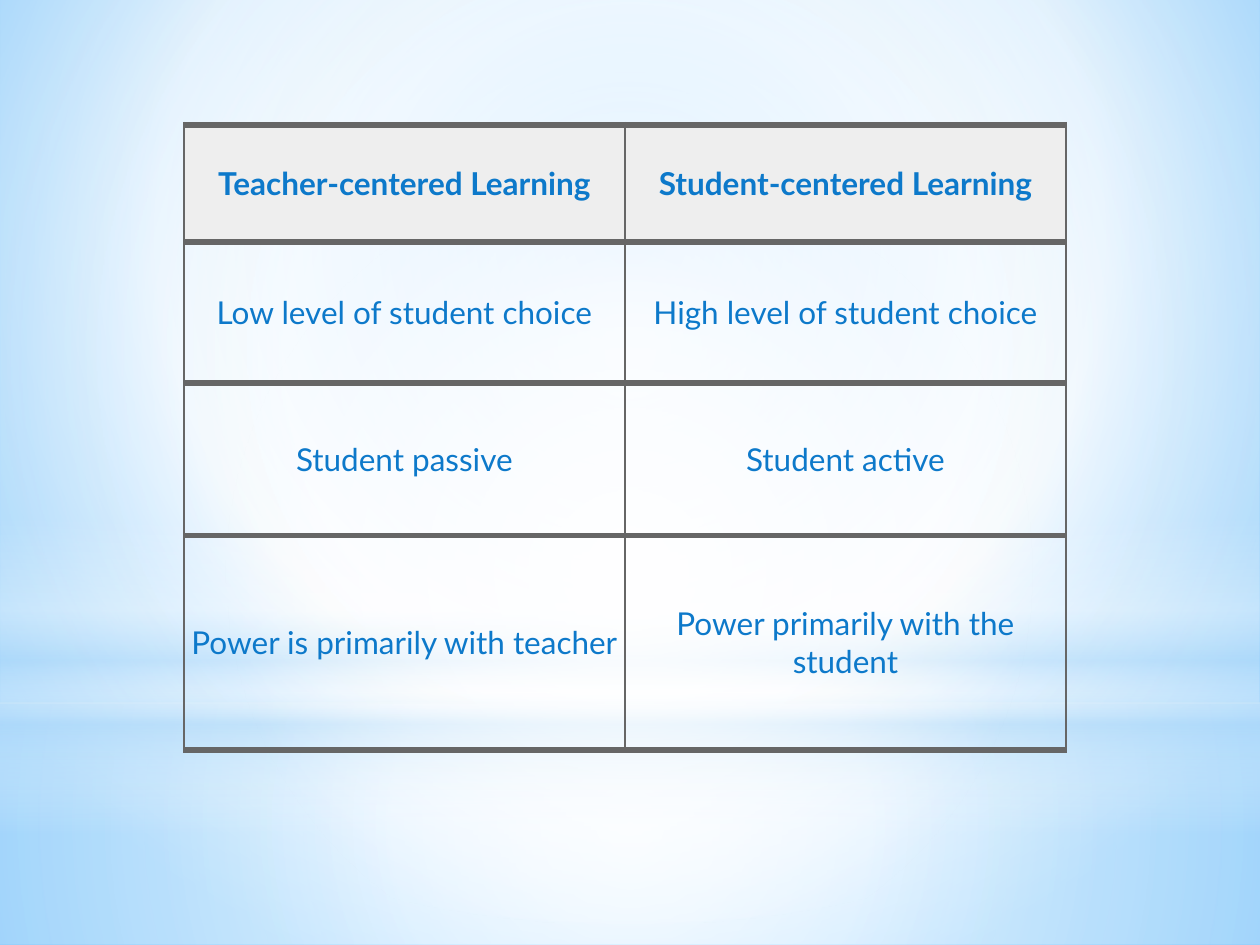
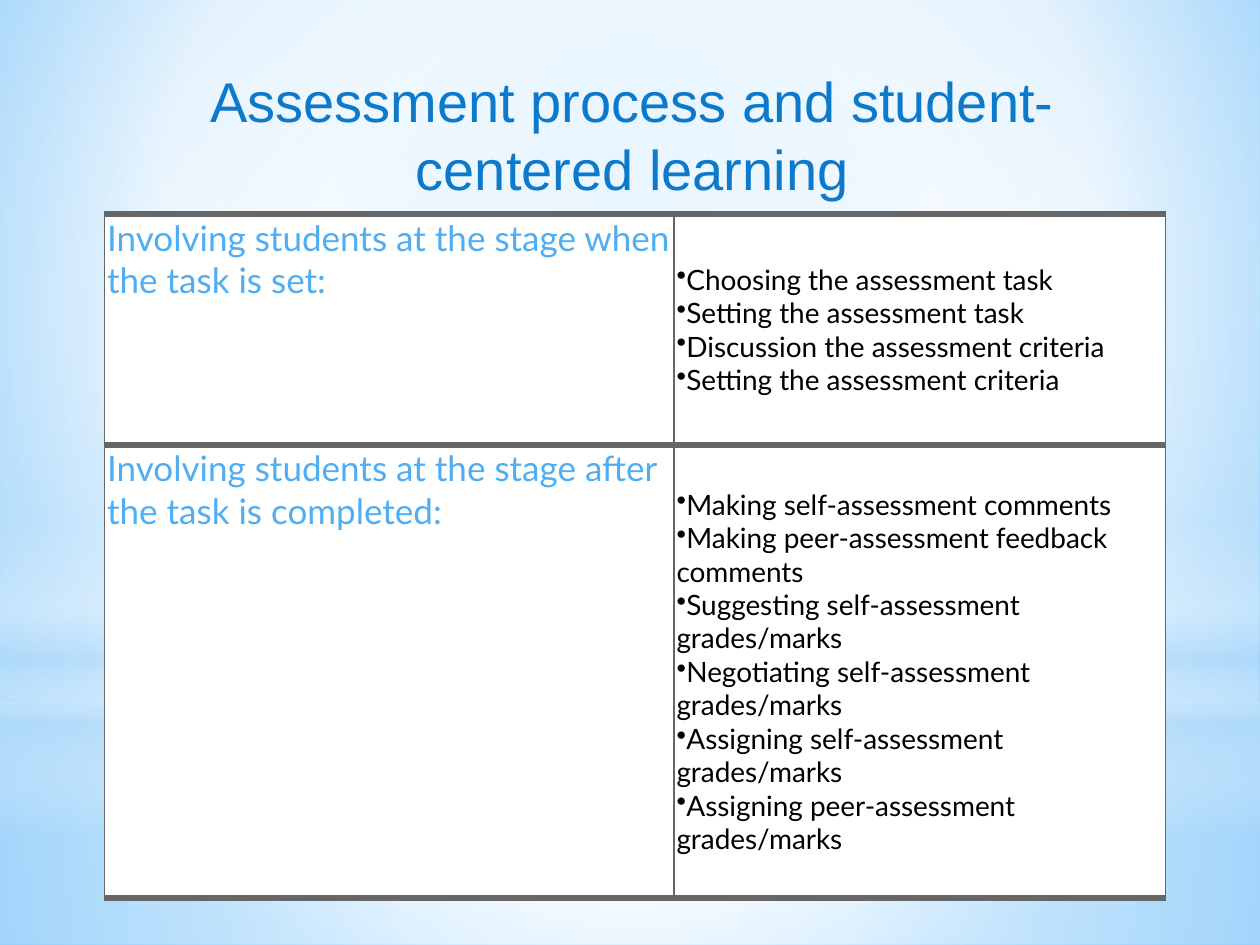
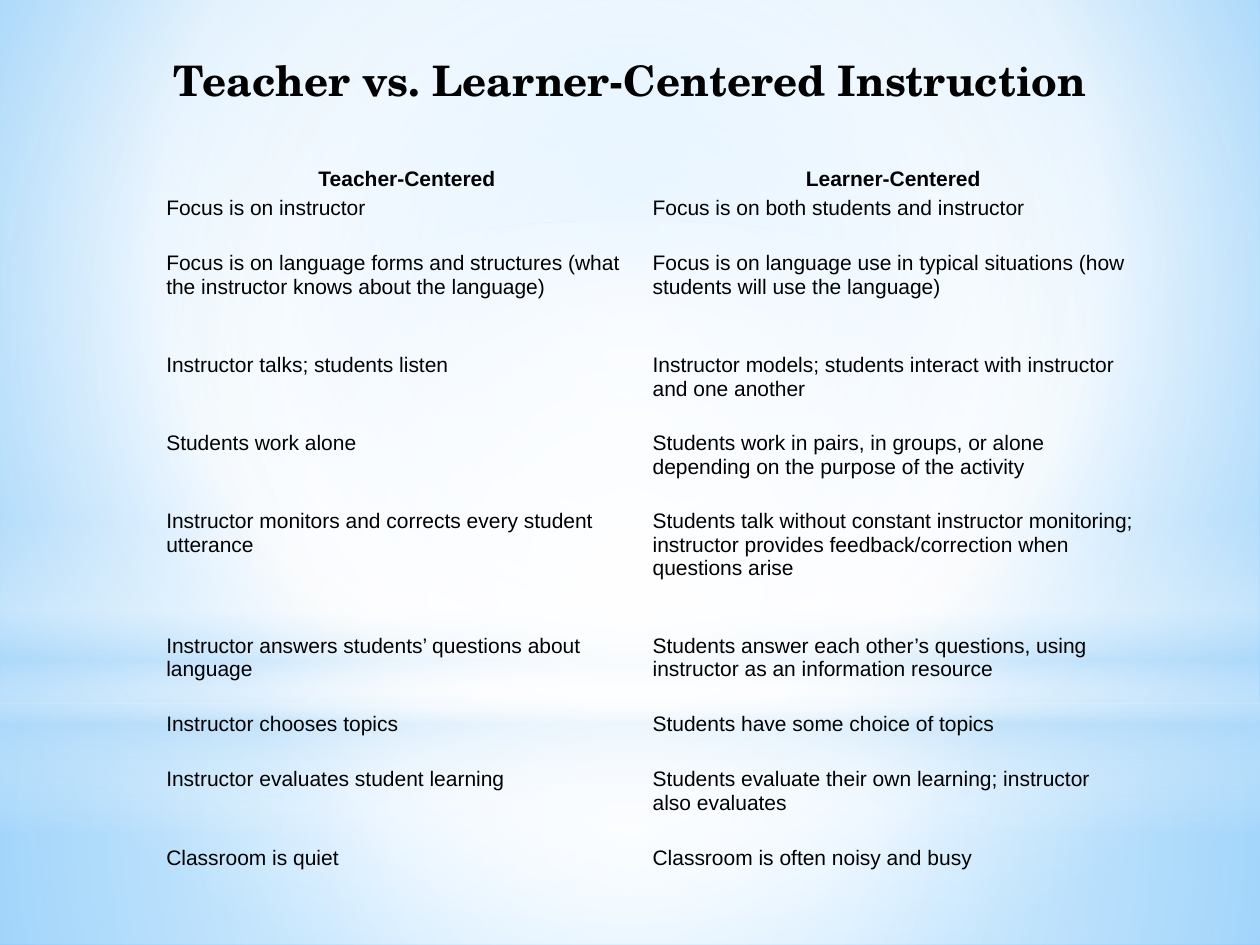
"""Build three slides comparing teacher-centered and student-centered learning."""
from pptx import Presentation
from pptx.dml.color import RGBColor
from pptx.enum.shapes import MSO_SHAPE as Shape
from pptx.enum.text import MSO_ANCHOR as Anchor, MSO_AUTO_SIZE as AutoSize, PP_ALIGN as Align
from pptx.oxml import parse_xml
from pptx.oxml.ns import nsdecls, qn
from pptx.util import Inches, Pt

BLUE, LIGHT_BLUE, PALE_BLUE = "0D79CA", "4FADF3", "B4DCFA"
BLACK, WHITE, HEADER_GRAY, RULE_GRAY = "000000", "FFFFFF", "EEEEEE", "666666"
NO_STYLE = "{2D5ABB26-0587-4C30-8999-92F81FD0307C}"
BORDERS = {"lnL": 0.75, "lnR": 0.75, "lnT": 3.75, "lnB": 3.75}

CENTER = (50, 50, 50, 50)
BACKGROUND = [(0, "9ED5FF", 100), (60, WHITE, 100), (100, "5BB9FF", 100)]
BACKGROUND_FOCUS = (20, 10, 20, 60)
BANDS = [
    (Shape.RECTANGLE, (0, 5.58, 10, 1.92), CENTER,
     [(0, WHITE, 91), (37, WHITE, 76), (100, PALE_BLUE, 79)]),
    (Shape.RECTANGLE, (0, 0, 10, 5.58), CENTER,
     [(0, WHITE, 89), (48, WHITE, 62), (100, PALE_BLUE, 79)]),
    (Shape.RECTANGLE, (0, 4.12, 10, 2.5), None,
     [(0, WHITE, 0), (29, WHITE, 30), (45, PALE_BLUE, 40),
      (55, WHITE, 26), (65, PALE_BLUE, 60), (100, WHITE, 0)]),
    (Shape.OVAL, (0, 1.75, 10, 5.58), CENTER, [(0, WHITE, 100), (56, WHITE, 0)]),
]

LEARNING_ROWS = [
    ("Teacher-centered Learning", "Student-centered Learning"),
    ("Low level of student choice", "High level of student choice"),
    ("Student passive", "Student active"),
    ("Power is primarily with teacher", "Power primarily with the student"),
]
ASSESSMENT_TITLE = "Assessment process and student-centered learning"
ASSESSMENT_ROWS = [
    ("Involving students at the stage when the task is set:",
     "\n".join(["Choosing the assessment task",
                "Setting the assessment task",
                "Discussion the assessment criteria",
                "Setting the assessment criteria"])),
    ("Involving students at the stage after the task is completed:",
     "\n".join(["Making self-assessment comments",
                "Making peer-assessment feedback comments",
                "Suggesting self-assessment grades/marks",
                "Negotiating self-assessment grades/marks",
                "Assigning self-assessment grades/marks",
                "Assigning peer-assessment grades/marks"])),
]
INSTRUCTION_TITLE = "Teacher vs. Learner-Centered Instruction"
INSTRUCTION_ROWS = [
    ("Teacher-Centered", "Learner-Centered"),
    ("Focus is on instructor", "Focus is on both students and instructor"),
    ("Focus is on language forms and structures (what the instructor knows about the language)",
     "Focus is on language use in typical situations (how students will use the language)"),
    ("Instructor talks; students listen",
     "Instructor models; students interact with instructor and one another"),
    ("Students work alone",
     "Students work in pairs, in groups, or alone depending on the purpose of the activity"),
    ("Instructor monitors and corrects every student utterance",
     "Students talk without constant instructor monitoring; "
     "instructor provides feedback/correction when questions arise"),
    ("Instructor answers students’ questions about language",
     "Students answer each other’s questions, using instructor as an information resource"),
    ("Instructor chooses topics", "Students have some choice of topics"),
    ("Instructor evaluates student learning",
     "Students evaluate their own learning; instructor also evaluates"),
    ("Classroom is quiet", "Classroom is often noisy and busy"),
]


def rgb(color):
    """Turn a hex string into a colour."""
    return RGBColor.from_string(color)


def set_gradient(properties, stops, focus):
    """Replace the empty fill by a gradient: circular around a focus, or vertical."""
    stop_xml = "".join(
        f'<a:gs pos="{position * 1000}"><a:srgbClr val="{color}">'
        f'<a:alpha val="{alpha * 1000}"/></a:srgbClr></a:gs>'
        for position, color, alpha in stops)
    direction = '<a:lin ang="5400000" scaled="0"/>'
    if focus:
        sides = " ".join(f'{side}="{part * 1000}"' for side, part in zip("ltrb", focus))
        direction = f'<a:path path="circle"><a:fillToRect {sides}/></a:path>'
    gradient = parse_xml(f'<a:gradFill {nsdecls("a")} rotWithShape="1">'
                         f'<a:gsLst>{stop_xml}</a:gsLst>{direction}</a:gradFill>')
    properties.replace(properties.find(qn("a:noFill")), gradient)


def decorate_master(master, slide):
    """Give the master its background and bands, drawn on a slide and moved over."""
    master.background.fill.background()
    set_gradient(master.element.find(".//" + qn("p:bgPr")), BACKGROUND, BACKGROUND_FOCUS)
    for index, (kind, box, focus, stops) in enumerate(BANDS):
        band = slide.shapes.add_shape(kind, *map(Inches, box))
        band.shadow.inherit = False
        band.fill.background()
        band.line.fill.background()
        set_gradient(band.element.find(qn("p:spPr")), stops, focus)
        band.element.find(".//" + qn("p:cNvPr")).set("id", str(100 + index))
        master.shapes.element.insert(2 + index, band.element)


def format_text(text_frame, font_name, size, color, bold=False, align=Align.LEFT):
    """Format every run of a text frame."""
    for paragraph in text_frame.paragraphs:
        paragraph.alignment = align
        for run in paragraph.runs:
            run.font.name = font_name
            run.font.size = Pt(size)
            run.font.bold = bold
            run.font.color.rgb = rgb(color)


def add_bullets(text_frame):
    """Put a bullet right before each paragraph."""
    for paragraph in text_frame.paragraphs:
        properties = paragraph._p.get_or_add_pPr()
        properties.set("marL", "0")
        properties.set("indent", "0")
        properties.append(parse_xml(f'<a:buChar {nsdecls("a")} char="•"/>'))


def set_title(slide, text, box, bottom_margin, *style):
    """Fill, move and format the title placeholder."""
    title = slide.shapes.title
    title.left, title.top, title.width, title.height = map(Inches, box)
    text_frame = title.text_frame
    text_frame.text = text
    text_frame.word_wrap = True
    text_frame.auto_size = AutoSize.NONE
    text_frame.vertical_anchor = Anchor.MIDDLE
    text_frame.margin_bottom = Inches(bottom_margin)
    format_text(text_frame, *style, align=Align.CENTER)


def add_plain_table(slide, rows, corner, widths, heights, margin):
    """Add an unstyled table with its text and return its frame."""
    frame = slide.shapes.add_table(len(rows), len(widths), *map(
        Inches, (*corner, sum(widths), sum(heights))))
    frame.element.find(".//" + qn("a:tableStyleId")).text = NO_STYLE
    table = frame.table
    table.first_row = table.horz_banding = False
    for column, width in zip(table.columns, widths):
        column.width = Inches(width)
    for row, height, texts in zip(table.rows, heights, rows):
        row.height = Inches(height)
        for cell, text in zip(row.cells, texts):
            cell.text_frame.text = text
            cell.fill.background()
            cell.margin_left = cell.margin_right = Inches(margin)
            cell.margin_top = cell.margin_bottom = Inches(margin)
    return frame


def add_borders(frame):
    """Rule all cells with thin vertical and thick horizontal lines."""
    for properties in frame.element.iter(qn("a:tcPr")):
        for index, (tag, width) in enumerate(BORDERS.items()):
            properties.insert(index, parse_xml(
                f'<a:{tag} {nsdecls("a")} w="{Pt(width)}"><a:solidFill>'
                f'<a:srgbClr val="{RULE_GRAY}"/></a:solidFill></a:{tag}>'))


def fill_cell(cell, color):
    """Fill a cell with one colour."""
    cell.fill.solid()
    cell.fill.fore_color.rgb = rgb(color)


def build_learning(slide):
    """Compare the two kinds of learning."""
    frame = add_plain_table(slide, LEARNING_ROWS, (1.46, 0.99), [3.5] * 2,
                            [0.93, 1.12, 1.21, 1.7], 0.03)
    for index, row in enumerate(frame.table.rows):
        for cell in row.cells:
            cell.vertical_anchor = Anchor.MIDDLE
            format_text(cell.text_frame, "Lato", 18, BLUE, index == 0, Align.CENTER)
            if index == 0:
                fill_cell(cell, HEADER_GRAY)
    add_borders(frame)


def build_assessment(slide):
    """List how students take part in assessment."""
    set_title(slide, ASSESSMENT_TITLE, (1.46, 0.44, 7.12, 1.25), 0.05, "Arial", 32, BLUE)
    frame = add_plain_table(slide, ASSESSMENT_ROWS, (0.83, 1.7), [4.52, 3.9], [1.83, 3.6], 0.02)
    for row in frame.table.rows:
        stage, tasks = row.cells
        format_text(stage.text_frame, "Lato", 20, LIGHT_BLUE)
        format_text(tasks.text_frame, "Lato", 16, BLACK)
        add_bullets(tasks.text_frame)
        tasks.vertical_anchor = Anchor.MIDDLE
        for cell in (stage, tasks):
            fill_cell(cell, WHITE)
    add_borders(frame)


def build_instruction(slide):
    """Compare the two kinds of instruction."""
    set_title(slide, INSTRUCTION_TITLE, (0.91, 0.36, 8.18, 0.81), 0.31,
              "TeX Gyre Schola", 24, BLACK, True)
    frame = add_plain_table(slide, INSTRUCTION_ROWS, (1.3, 1.31), [3.86] * 2,
                            [0.17, 0.44, 0.81, 0.62, 0.62, 0.99, 0.62, 0.44, 0.62, 0.44], 0.02)
    for index, row in enumerate(frame.table.rows):
        align = Align.LEFT if index else Align.CENTER
        for cell in row.cells:
            format_text(cell.text_frame, "Arial", 12, BLACK, index == 0, align)


def main():
    """Build and save the presentation."""
    presentation = Presentation()
    presentation.slide_width, presentation.slide_height = Inches(10), Inches(7.5)
    title_only, blank = presentation.slide_layouts[5], presentation.slide_layouts[6]
    first_slide = presentation.slides.add_slide(blank)
    decorate_master(presentation.slide_master, first_slide)
    build_learning(first_slide)
    for build in (build_assessment, build_instruction):
        build(presentation.slides.add_slide(title_only))
    presentation.save("out.pptx")


if __name__ == "__main__":
    main()
